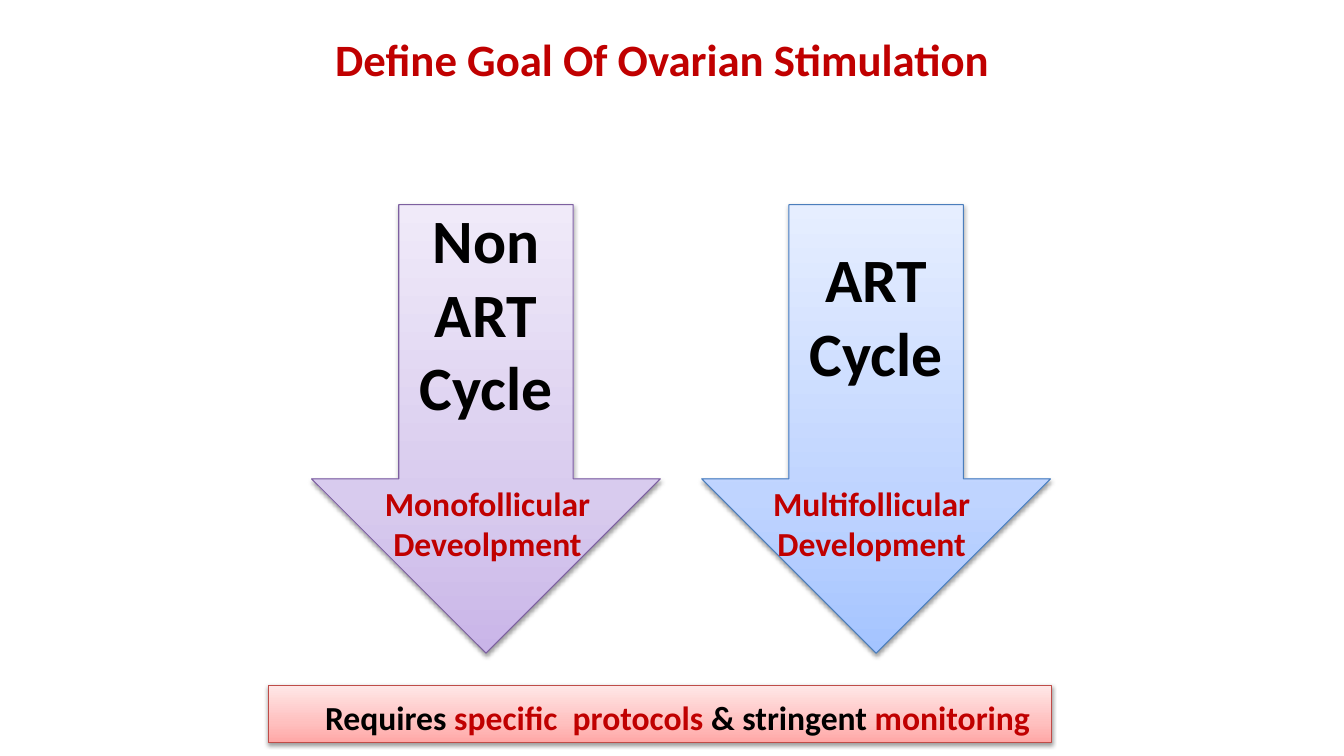
from copy import deepcopy
from dataclasses import dataclass

from lxml import etree
from pptx import Presentation
from pptx import util as u
from pptx.dml.color import RGBColor
from pptx.enum import shapes, text
from pptx.oxml.ns import qn

BLACK = "000000"
RED = "C00000"
STOPS = (0, 0.35, 1)


@dataclass
class Arrow:
    left: float
    tints: tuple[str, str, str]
    edge: str
    label: str
    top: float
    high: float
    goal: str
    inset: float


ARROWS = [
    Arrow(3.09, ("C9B5E8", "D8CBEE", "F0EAF9"), "7D60A0",
          "Non ART Cycle", 1.95, 2.32, "Monofollicular Deveolpment", 0.34),
    Arrow(6.96, ("A4C4FF", "BFD4FF", "E6EEFF"), "4B7EBC",
          "ART Cycle", 2.34, 1.58, "Multifollicular Development", 0.28),
]


def paint(target, tint: str) -> None:
    target.rgb = RGBColor.from_string(tint)


def place(left: float, top: float, width: float, high: float) -> tuple:
    return tuple(u.Inches(n) for n in (left, top, width, high))


def write(shape, runs: list[tuple[str, str]], size: float = 24,
          anchor=text.MSO_ANCHOR.TOP, indent: float = 0, top: float = 0.05) -> None:
    frame = shape.text_frame
    frame.word_wrap = True
    frame.auto_size = text.MSO_AUTO_SIZE.NONE
    frame.vertical_anchor = anchor
    frame.margin_left = frame.margin_right = u.Inches(0.1)
    frame.margin_top, frame.margin_bottom = u.Inches(top), u.Inches(0.05)
    line = frame.paragraphs[0]
    line.alignment = text.PP_ALIGN.CENTER
    if indent:
        line._p.get_or_add_pPr().set("marL", str(u.Inches(indent)))
    for words, tint in runs:
        run = line.add_run()
        run.text = words
        run.font.name = "Calibri"
        run.font.size = u.Pt(size)
        run.font.bold = True
        paint(run.font.color, tint)


def shade(shape) -> None:
    shape.shadow.inherit = False
    effects = shape._element.spPr.find(qn("a:effectLst"))
    shadow = etree.SubElement(effects, qn("a:outerShdw"), blurRad="40000",
                              dist="20000", dir="5400000", rotWithShape="0")
    tint = etree.SubElement(shadow, qn("a:srgbClr"), val=BLACK)
    etree.SubElement(tint, qn("a:alpha"), val="38000")


def draw(slide, kind, box: tuple, tints: tuple[str, str, str], edge: str):
    shape = slide.shapes.add_shape(kind, *box)
    shape.fill.gradient()
    shape.fill.gradient_angle = 90
    stops = shape._element.spPr.find(".//" + qn("a:gsLst"))
    stops.append(deepcopy(stops[-1]))
    for stop, spot, tint in zip(shape.fill.gradient_stops, STOPS, tints):
        stop.position = spot
        paint(stop.color, tint)
    paint(shape.line.color, edge)
    shape.line.width = u.Pt(0.75)
    shade(shape)
    return shape


def main() -> None:
    deck = Presentation()
    deck.slide_width, deck.slide_height = u.Inches(13.33), u.Inches(7.5)
    slide = deck.slides.add_slide(deck.slide_layouts[5])

    title = slide.shapes.title
    title.left, title.top, title.width, title.height = place(2.6, 0.26, 7.94, 0.98)
    write(title, [("Define Goal Of Ovarian Stimulation", RED)], size=32)

    for arrow in ARROWS:
        draw(slide, shapes.MSO_SHAPE.DOWN_ARROW,
             place(arrow.left, 2.03, 3.46, 4.45), arrow.tints, arrow.edge)
        label = slide.shapes.add_textbox(
            *place(arrow.left + 0.94, arrow.top, 1.58, arrow.high))
        write(label, [(arrow.label, BLACK)], size=44)
        goal = slide.shapes.add_textbox(
            *place(arrow.left + arrow.inset, 4.74, 2.81, 0.91))
        write(goal, [(arrow.goal, RED)])

    note = draw(slide, shapes.MSO_SHAPE.RECTANGLE, place(2.66, 6.8, 7.77, 0.57),
                ("FFA6A5", "FFC0BF", "FFE7E7"), "BF4C48")
    write(note, [("Requires ", BLACK), ("specific  protocols ", RED),
                 ("& stringent ", BLACK), ("monitoring", RED)],
          anchor=text.MSO_ANCHOR.MIDDLE, indent=0.35, top=0.11)

    deck.save("out.pptx")


if __name__ == "__main__":
    main()
